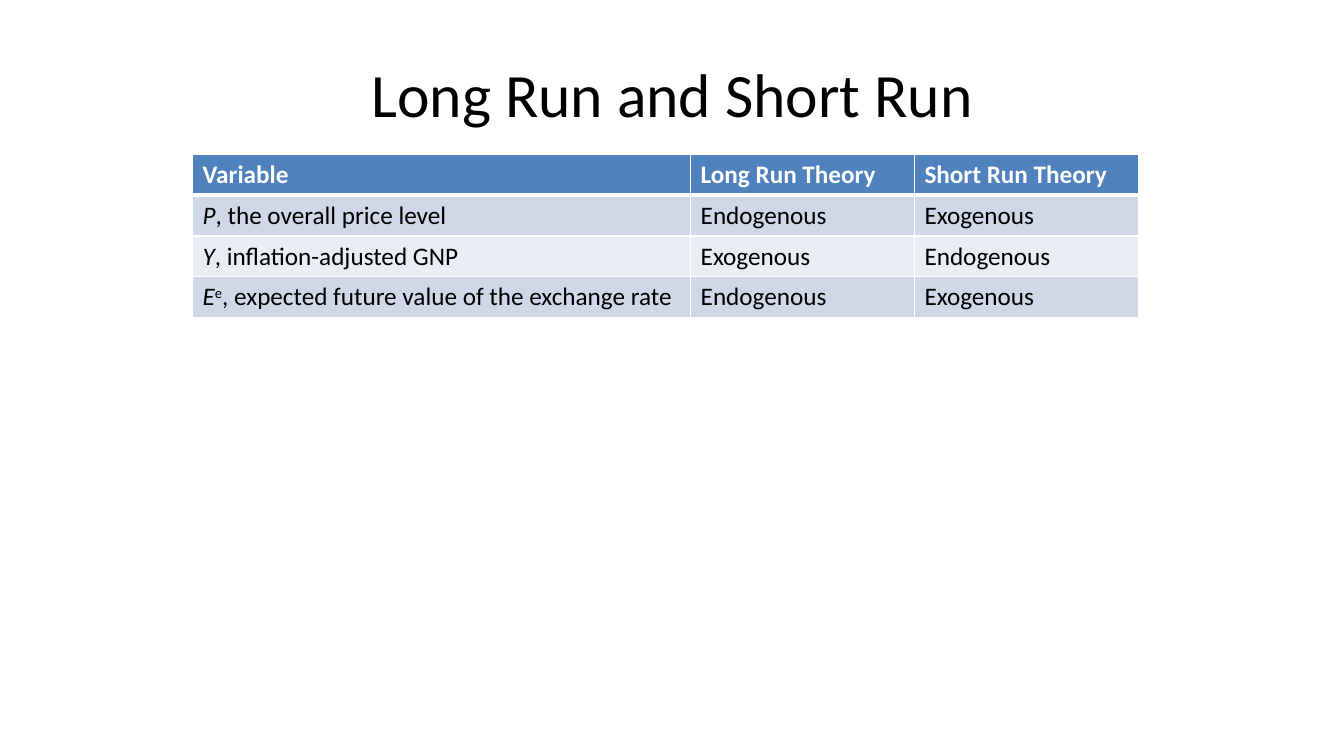
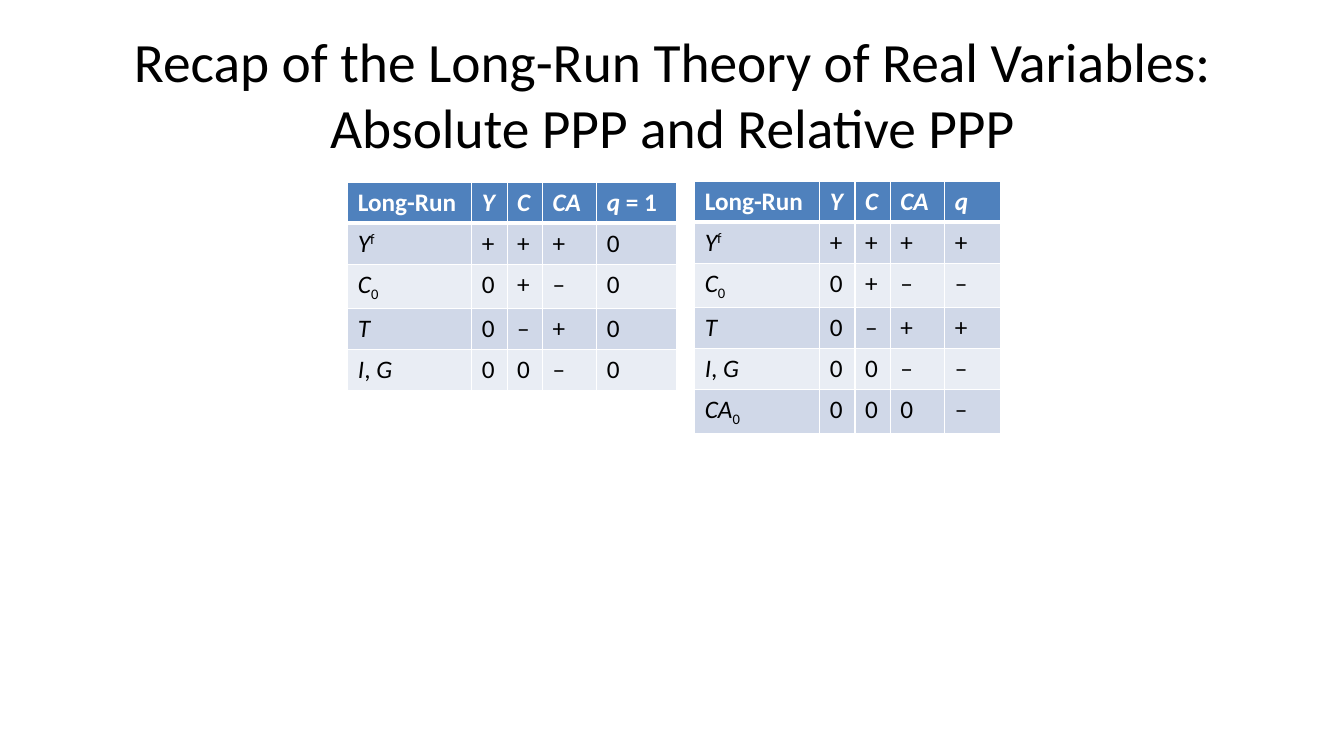
from dataclasses import dataclass

from lxml.etree import SubElement
from pptx import Presentation
from pptx.dml.color import RGBColor
from pptx.enum.text import MSO_ANCHOR, MSO_AUTO_SIZE, PP_ALIGN
from pptx.oxml.ns import qn
from pptx.util import Inches, Pt


@dataclass(frozen=True)
class Theme:
    font: str = "Calibri"
    text: RGBColor = RGBColor(0x00, 0x00, 0x00)
    header_text: RGBColor = RGBColor(0xFF, 0xFF, 0xFF)
    header_fill: RGBColor = RGBColor(0x4F, 0x81, 0xBD)
    bands: tuple = (RGBColor(0xD0, 0xD8, 0xE8), RGBColor(0xE9, 0xED, 0xF4))
    border: str = "FFFFFF"
    thin: int = 1
    thick: int = 3
    title_size: float = 44
    long_title_size: float = 39.6
    body_size: float = 18


THEME = Theme()
TITLE_BOX = (0.67, 0.3, 12, 1.25)

# Text styles: italic symbols with raised or lowered indices
ITALIC = {"italic": True}
SUPER = 30000
SUB = -25000


def symbol(name, index=None, shift=None, rest=""):
    """Runs of an italic variable, its index and the words after it."""
    runs = [(name, True, None)]
    if index:
        runs.append((index, False, shift))
    if rest:
        runs.append((rest, False, None))
    return runs


def set_format(font, **values):
    font.color.rgb = values.pop("color")
    for name, value in values.items():
        setattr(font, name, value)


def add_title(slide, lines, size):
    sp = slide.shapes.title
    sp.left, sp.top, sp.width, sp.height = map(Inches, TITLE_BOX)
    tf = sp.text_frame
    settings = {"word_wrap": True, "auto_size": MSO_AUTO_SIZE.NONE,
                "vertical_anchor": MSO_ANCHOR.MIDDLE}
    for name, value in settings.items():
        setattr(tf, name, value)
    p = tf.paragraphs[0]
    p.alignment = PP_ALIGN.CENTER
    for i, line in enumerate(lines):
        if i:
            p.add_line_break()
        r = p.add_run()
        r.text = line
        set_format(r.font, name=THEME.font, size=Pt(size), color=THEME.text)


def set_borders(cell, **widths):
    tc_pr = cell._tc.get_or_add_tcPr()
    for i, (side, width) in enumerate(widths.items()):
        ln = SubElement(tc_pr, qn(f"a:ln{side}"), w=str(Pt(width)))
        fill = SubElement(ln, qn("a:solidFill"))
        SubElement(fill, qn("a:srgbClr"), val=THEME.border)
        tc_pr.insert(i, ln)


def fill_cell(cell, content, row):
    header = row == 0
    cell.fill.solid()
    cell.fill.fore_color.rgb = (
        THEME.header_fill if header else THEME.bands[(row - 1) % 2])
    set_borders(cell, L=THEME.thin, R=THEME.thin,
                T=THEME.thick if row == 1 else THEME.thin,
                B=THEME.thick if header else THEME.thin)
    p = cell.text_frame.paragraphs[0]
    runs = [(content, False, None)] if isinstance(content, str) else content
    for text, italic, shift in runs:
        r = p.add_run()
        r.text = text
        set_format(r.font, name=THEME.font, size=Pt(THEME.body_size),
                   bold=header, italic=italic,
                   color=THEME.header_text if header else THEME.text)
        if shift:
            r.font._element.set("baseline", str(shift))


def add_grid(slide, left, top, height, col_widths, rows):
    """Banded table with a header row and equal row heights."""
    frame = slide.shapes.add_table(
        len(rows), len(col_widths), Inches(left), Inches(top),
        Inches(sum(col_widths)), Inches(height))
    table = frame.table
    for col, width in zip(table.columns, col_widths):
        col.width = Inches(width)
    for i, row in enumerate(rows):
        table.rows[i].height = Inches(height / len(rows))
        for j, content in enumerate(row):
            fill_cell(table.cell(i, j), content, i)


def new_slide(prs, lines, size):
    s = prs.slides.add_slide(prs.slide_layouts[5])
    add_title(s, lines, size)
    return s


def add_theory_slide(prs):
    s = new_slide(prs, ["Long Run and Short Run"], THEME.title_size)
    endo, exo = "Endogenous", "Exogenous"
    add_grid(s, 1.91, 1.53, 1.62, [4.94, 2.22, 2.22], [
        ["Variable", "Long Run Theory", "Short Run Theory"],
        [symbol("P", rest=", the overall price level"), endo, exo],
        [symbol("Y", rest=", inflation-adjusted GNP"), exo, endo],
        [symbol("E", "e", SUPER,
                ", expected future value of the exchange rate"), endo, exo],
    ])


def add_recap_slide(prs):
    s = new_slide(prs, ["Recap of the Long-Run Theory of Real Variables:",
                        "Absolute PPP and Relative PPP"],
                  THEME.long_title_size)
    # Effects on Y, C, CA and q; absolute PPP fixes q
    header = ["Long-Run", symbol("Y"), symbol("C"), symbol("CA")]
    effects = [
        [symbol("Y", "f", SUPER), *"++++"],
        [symbol("C", "0", SUB), *"0+––"],
        [symbol("T"), *"0–++"],
        [symbol("I", rest=", ") + symbol("G"), *"00––"],
    ]
    absolute = [header + [symbol("q", rest=" = 1")]]
    absolute += [row[:-1] + ["0"] for row in effects]
    relative = [header + [symbol("q")], *effects,
                [symbol("CA", "0", SUB), *"000–"]]
    add_grid(s, 3.45, 1.81, 2.03, [1.23, 0.35, 0.35, 0.54, 0.79], absolute)
    add_grid(s, 6.89, 1.8, 2.43, [1.24, 0.35, 0.35, 0.54, 0.55], relative)


def main():
    prs = Presentation()
    prs.slide_width, prs.slide_height = Inches(13.33), Inches(7.5)
    add_theory_slide(prs)
    add_recap_slide(prs)
    prs.save("out.pptx")


if __name__ == "__main__":
    main()
